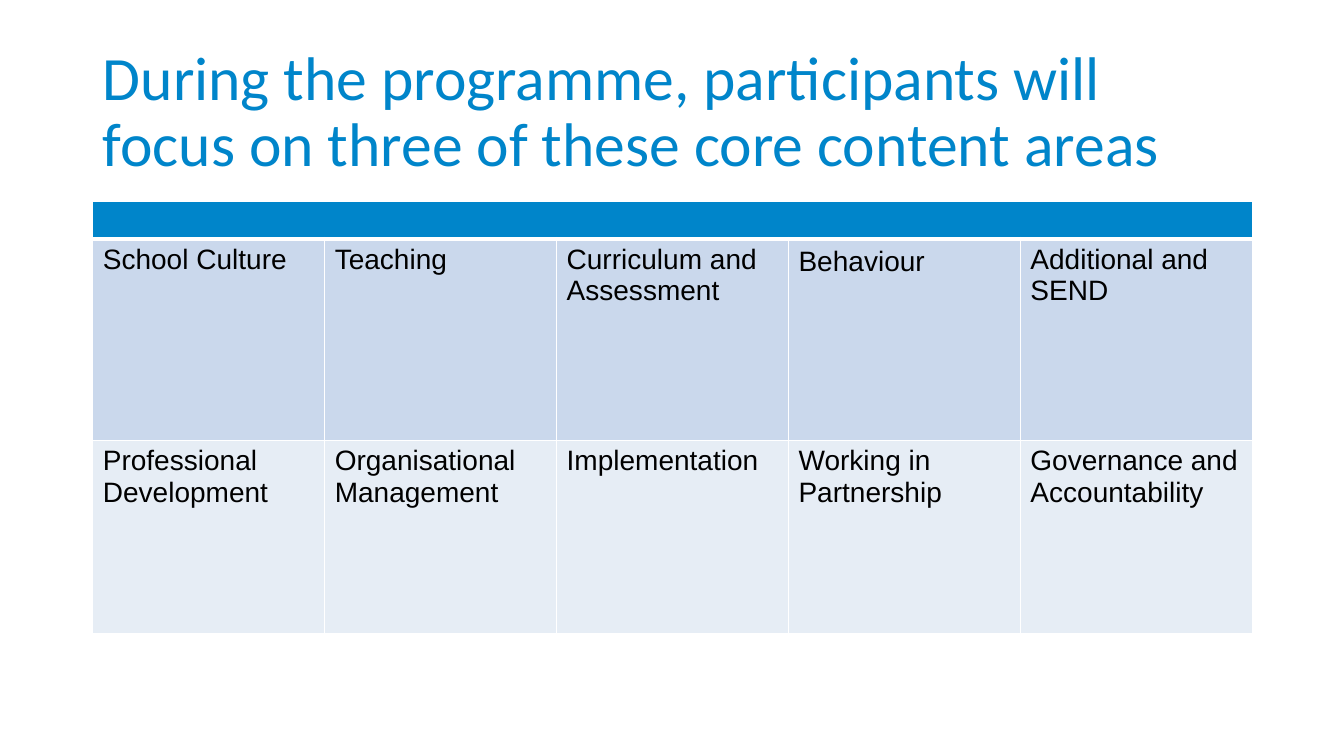
import dataclasses

import lxml.etree
import pptx
import pptx.dml.color
import pptx.enum.text
import pptx.oxml.ns
import pptx.util

Inches = pptx.util.Inches
Pt = pptx.util.Pt


@dataclasses.dataclass(frozen=True)
class Theme:
    blue: str = "0085CA"
    white: str = "FFFFFF"
    black: str = "000000"
    bands: tuple = ("CAD8EC", "E6EDF5")
    title_font: str = "Calibri"
    body_font: str = "Arial"
    title_size: int = 44
    body_size: int = 20
    rule: int = 1
    header_rule: int = 3


THEME = Theme()
TITLE = "During the programme, participants will focus on three of these core content areas"
AREAS = (
    ("School Culture", "Teaching", "Curriculum and Assessment", "Behaviour",
     "Additional and SEND"),
    ("Professional Development", "Organisational Management", "Implementation",
     "Working in Partnership", "Governance and Accountability"),
)
ROW_HEIGHTS = (0.37, 2, 1.92)


def rgb(code):
    return pptx.dml.color.RGBColor.from_string(code)


def write_text(frame, text, *, font, size, color, spacing=None):
    para = frame.paragraphs[0]
    para.alignment = pptx.enum.text.PP_ALIGN.LEFT
    if spacing:
        para.line_spacing = spacing
    span = para.add_run()
    span.text = text
    span.font.name = font
    span.font.size = Pt(size)
    span.font.color.rgb = rgb(color)


def style_cell(cell, fill, top, bottom):
    # Borders precede the fill in the cell properties
    properties = cell._tc.get_or_add_tcPr()
    widths = {"a:lnL": THEME.rule, "a:lnR": THEME.rule, "a:lnT": top, "a:lnB": bottom}
    for tag, width in widths.items():
        line = lxml.etree.SubElement(properties, pptx.oxml.ns.qn(tag), w=str(Pt(width)))
        solid = lxml.etree.SubElement(line, pptx.oxml.ns.qn("a:solidFill"))
        lxml.etree.SubElement(solid, pptx.oxml.ns.qn("a:srgbClr"), val=THEME.white)
    cell.fill.solid()
    cell.fill.fore_color.rgb = rgb(fill)


def place_title(page, left, top, width, height):
    title = page.shapes.title
    title.left, title.top = Inches(left), Inches(top)
    title.width, title.height = Inches(width), Inches(height)
    frame = title.text_frame
    frame.word_wrap = True
    frame.auto_size = pptx.enum.text.MSO_AUTO_SIZE.NONE
    frame.vertical_anchor = pptx.enum.text.MSO_ANCHOR.MIDDLE
    write_text(frame, TITLE, font=THEME.title_font, size=THEME.title_size,
               color=THEME.blue, spacing=0.9)


def place_areas(page, left, top, width):
    columns = len(AREAS[0])
    table = page.shapes.add_table(
        len(ROW_HEIGHTS), columns, Inches(left), Inches(top),
        Inches(width), Inches(sum(ROW_HEIGHTS))).table
    for row, height in zip(table.rows, ROW_HEIGHTS):
        row.height = Inches(height)
    for column in table.columns:
        column.width = Inches(width / columns)

    # Empty header band across all columns
    for cell in table.rows[0].cells:
        style_cell(cell, THEME.blue, THEME.rule, THEME.header_rule)
        cell.margin_top = cell.margin_bottom = 0
    table.cell(0, 0).merge(table.cell(0, columns - 1))

    # Content areas
    for index, (names, fill) in enumerate(zip(AREAS, THEME.bands), start=1):
        rule_above = THEME.header_rule if index == 1 else THEME.rule
        for cell, name in zip(table.rows[index].cells, names):
            style_cell(cell, fill, rule_above, THEME.rule)
            write_text(cell.text_frame, name, font=THEME.body_font,
                       size=THEME.body_size, color=THEME.black,
                       spacing=1.07 if name == "Behaviour" else None)


def main():
    deck = pptx.Presentation()
    deck.slide_width, deck.slide_height = Inches(13.33), Inches(7.5)
    page = deck.slides.add_slide(deck.slide_layouts.get_by_name("Title Only"))
    place_title(page, 0.92, 0.4, 11.5, 1.45)
    place_areas(page, 0.92, 2, 11.5)
    deck.save("out.pptx")


if __name__ == "__main__":
    main()
